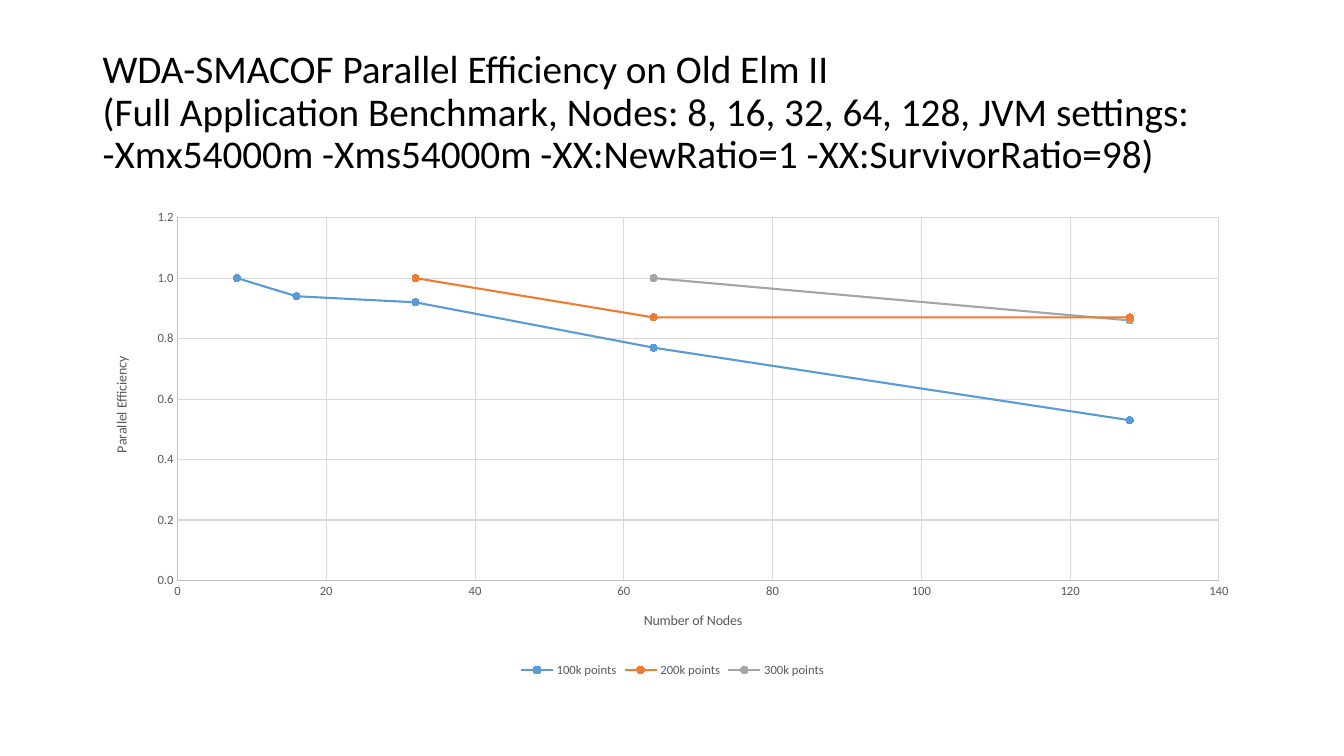
from dataclasses import dataclass

from lxml.etree import SubElement
from pptx import Presentation
from pptx.chart.data import XyChartData
from pptx.dml.color import RGBColor
from pptx.enum.chart import (XL_CHART_TYPE, XL_LEGEND_POSITION, XL_MARKER_STYLE,
                             XL_TICK_LABEL_POSITION, XL_TICK_MARK)
from pptx.enum.text import MSO_ANCHOR
from pptx.oxml.ns import qn
from pptx.util import Pt

PX = 9144  # EMU, 100 px to the inch
WIDE, HIGH = 1150, 476  # chart size in px
FONT = "Calibri"
BLACK = RGBColor(0x00, 0x00, 0x00)
GRAY = RGBColor(0x59, 0x59, 0x59)
AXIS = RGBColor(0xBF, 0xBF, 0xBF)
GRID = RGBColor(0xD9, 0xD9, 0xD9)
BLUE = RGBColor(0x5B, 0x9B, 0xD5)
ORANGE = RGBColor(0xED, 0x7D, 0x31)
SILVER = RGBColor(0xA5, 0xA5, 0xA5)


@dataclass(frozen=True)
class Curve:
    name: str
    color: RGBColor
    points: dict[int, float]


@dataclass(frozen=True)
class Scale:
    title: str
    top: float
    step: float
    format: str
    spot: dict[str, int]


TITLE = (
    "WDA-SMACOF Parallel Efficiency on Old Elm II",
    "(Full Application Benchmark, Nodes: 8, 16, 32, 64, 128, JVM settings:",
    "-Xmx54000m -Xms54000m -XX:NewRatio=1 -XX:SurvivorRatio=98)",
)
CURVES = (
    Curve("100k points", BLUE, {8: 1, 16: 0.94, 32: 0.92, 64: 0.77, 128: 0.53}),
    Curve("200k points", ORANGE, {32: 1, 64: 0.87, 128: 0.87}),
    Curve("300k points", SILVER, {64: 1, 128: 0.86}),
)
NODES = Scale("Number of Nodes", 140, 20, "0", {"x": 544, "y": 404})
RATIO = Scale("Parallel Efficiency", 1.2, 0.2, "0.0", {"x": 17, "y": 151})
PLOT = {"x": 84, "y": 16, "w": 1033, "h": 360}


def style(font, size: float, color: RGBColor) -> None:
    font.name = FONT
    font.size = Pt(size)
    font.bold = False
    font.color.rgb = color


def stroke(line, color: RGBColor, width: float) -> None:
    line.color.rgb = color
    line.width = Pt(width)


def place(parent, index: int, spot: dict[str, int]) -> None:
    """Give a chart part a manual layout, in px from the chart's corner."""
    for old in parent.findall(qn("c:layout")):
        parent.remove(old)
    layout = SubElement(parent, qn("c:layout"))
    parent.insert(index, layout)
    manual = SubElement(layout, qn("c:manualLayout"))
    if "w" in spot:
        SubElement(manual, qn("c:layoutTarget")).set("val", "inner")
    for side in ("x", "y"):
        SubElement(manual, qn(f"c:{side}Mode")).set("val", "edge")
    for key, value in spot.items():
        whole = WIDE if key in "xw" else HIGH
        SubElement(manual, qn(f"c:{key}")).set("val", str(value / whole))


def add_title(slide) -> None:
    box = slide.shapes.add_textbox(92 * PX, 40 * PX, 1150 * PX, 145 * PX)
    frame = box.text_frame
    frame.word_wrap = True
    frame.vertical_anchor = MSO_ANCHOR.MIDDLE
    para = frame.paragraphs[0]
    para.line_spacing = 0.9
    for row, text in enumerate(TITLE):
        if row:
            para.add_line_break()
        run = para.add_run()
        run.text = text
        style(run.font, 28, BLACK)


def set_axis(axis, scale: Scale) -> None:
    axis.minimum_scale = 0
    axis.maximum_scale = scale.top
    axis.major_unit = scale.step
    axis.major_tick_mark = axis.minor_tick_mark = XL_TICK_MARK.NONE
    axis.tick_label_position = XL_TICK_LABEL_POSITION.NEXT_TO_AXIS
    axis.tick_labels.number_format = scale.format
    axis.tick_labels.number_format_is_linked = False
    style(axis.tick_labels.font, 9, GRAY)
    axis.has_major_gridlines = True
    stroke(axis.format.line, AXIS, 0.75)
    stroke(axis.major_gridlines.format.line, GRID, 0.75)
    run = axis.axis_title.text_frame.paragraphs[0].add_run()
    run.text = scale.title
    style(run.font, 10, GRAY)
    place(axis.axis_title._element, 1, scale.spot)


def add_plot(slide) -> None:
    data = XyChartData()
    for curve in CURVES:
        series = data.add_series(curve.name)
        for nodes, ratio in curve.points.items():
            series.add_data_point(nodes, ratio)
    chart = slide.shapes.add_chart(XL_CHART_TYPE.XY_SCATTER_LINES, 92 * PX, 200 * PX,
                                   WIDE * PX, HIGH * PX, data).chart
    style(chart.font, 10, BLACK)
    chart.has_title = False
    chart.has_legend = True
    chart.legend.position = XL_LEGEND_POSITION.BOTTOM
    chart.legend.include_in_layout = False
    style(chart.legend.font, 9, GRAY)
    set_axis(chart.category_axis, NODES)
    set_axis(chart.value_axis, RATIO)
    turn = chart.value_axis.axis_title.text_frame._txBody.bodyPr
    turn.set("rot", "-5400000")
    turn.set("vert", "horz")
    place(chart._chartSpace.chart.plotArea, 0, PLOT)
    plot = chart.plots[0]
    plot.vary_by_categories = False
    for series, curve in zip(plot.series, CURVES):
        series.smooth = False
        stroke(series.format.line, curve.color, 1.5)
        marker = series.marker
        marker.style = XL_MARKER_STYLE.CIRCLE
        marker.size = 5
        marker.format.fill.solid()
        marker.format.fill.fore_color.rgb = curve.color
        stroke(marker.format.line, curve.color, 0.75)


def main() -> None:
    deck = Presentation()
    deck.slide_width = 1333 * PX
    deck.slide_height = 750 * PX
    slide = deck.slides.add_slide(deck.slide_layouts[6])
    add_title(slide)
    add_plot(slide)
    deck.save("out.pptx")


if __name__ == "__main__":
    main()
